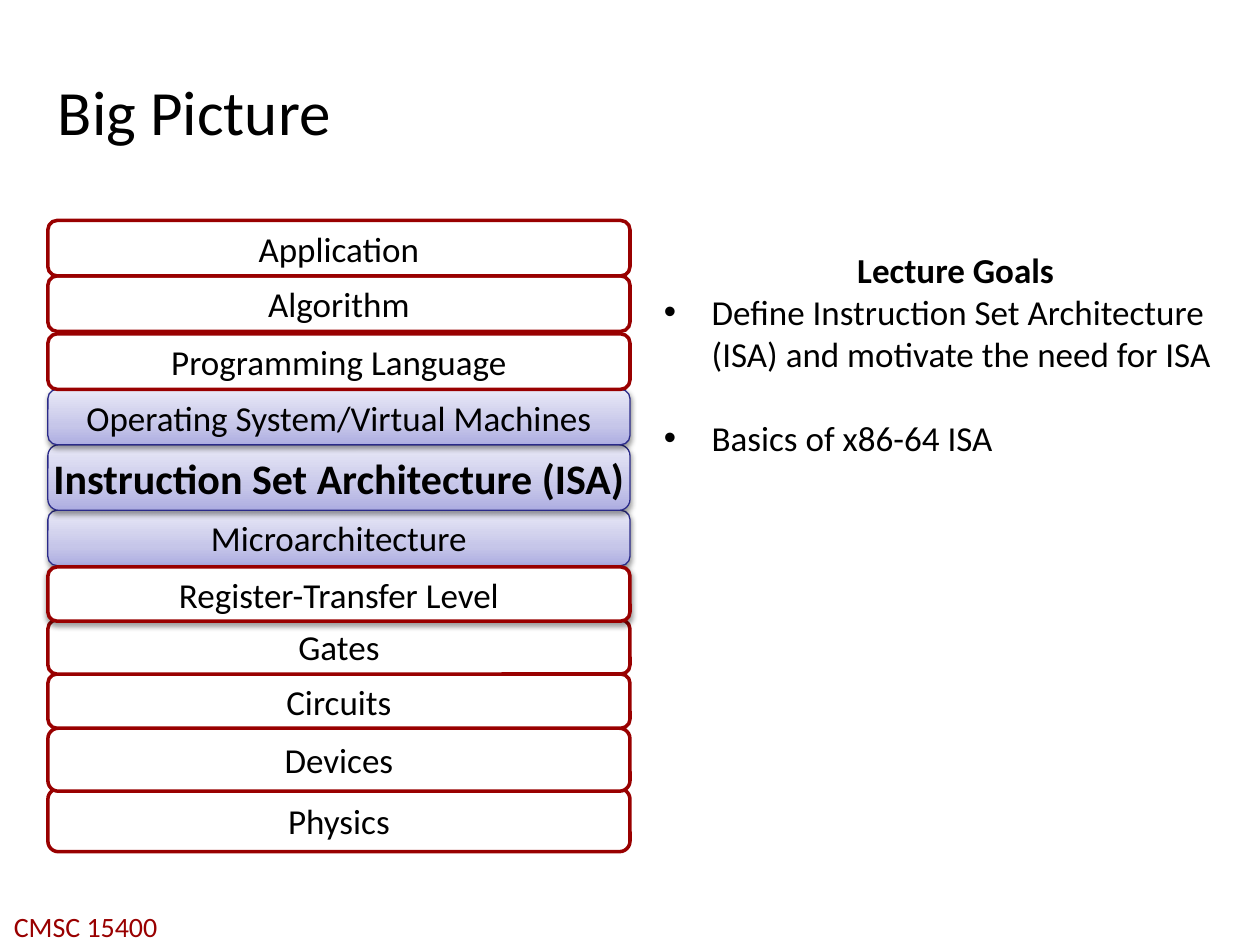
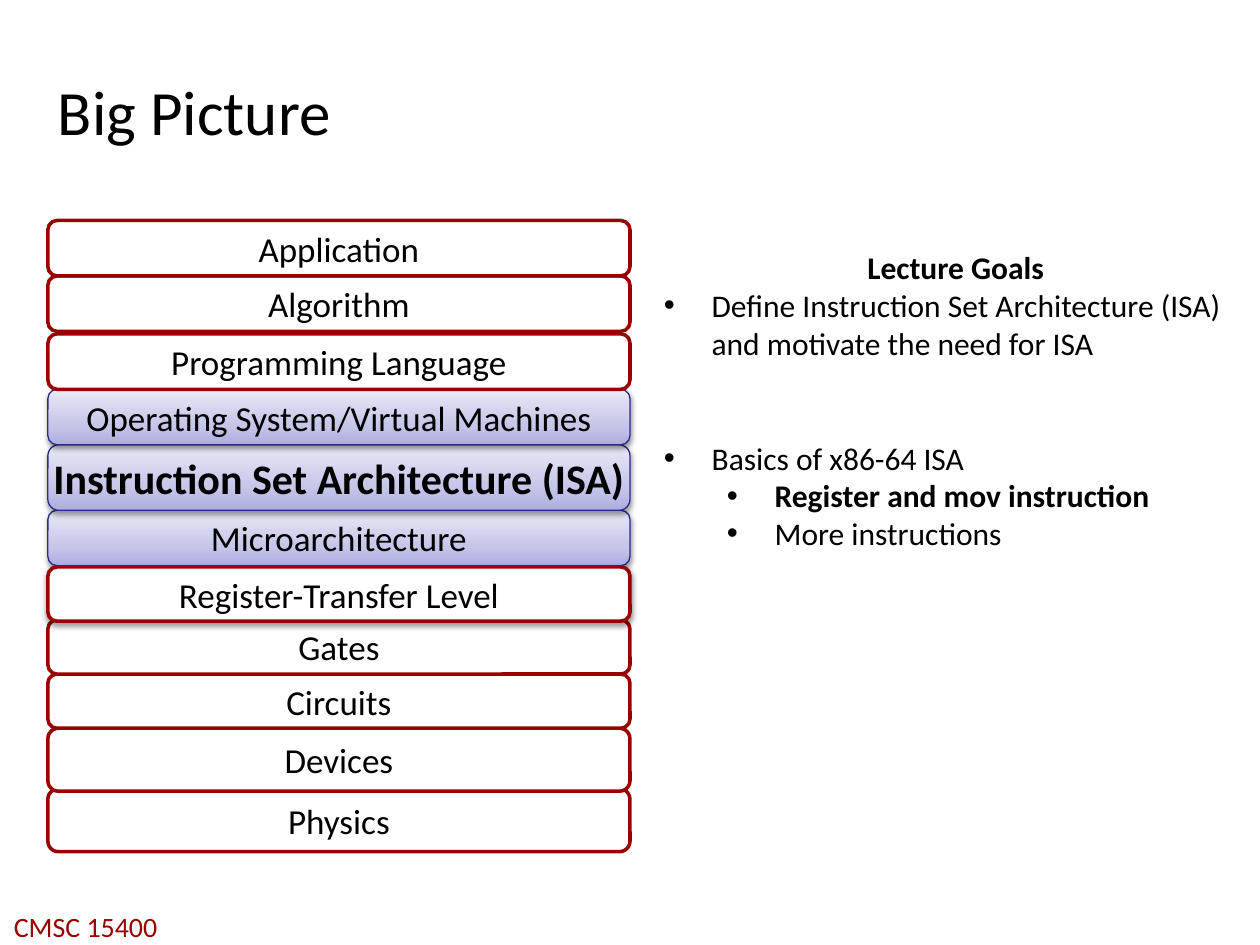
from dataclasses import dataclass

from lxml.etree import SubElement
from pptx import Presentation
from pptx.dml.color import RGBColor
from pptx.enum.shapes import MSO_SHAPE
from pptx.enum.text import MSO_ANCHOR, MSO_AUTO_SIZE, PP_ALIGN
from pptx.oxml import parse_xml
from pptx.oxml.ns import nsdecls, qn
from pptx.util import Emu, Inches, Pt

TITLE = "Big Picture"
COURSE = "CMSC 15400"

# Layer, height, gap to the layer above, look
LAYERS = [
    ("Application", 0.44, 0, "plain"),
    ("Algorithm", 0.44, 0, "plain"),
    ("Programming Language", 0.44, 0.02, "plain"),
    ("Operating System/Virtual Machines", 0.44, 0, "focus"),
    ("Instruction Set Architecture (ISA)", 0.52, 0, "key"),
    ("Microarchitecture", 0.44, 0, "focus"),
    ("Register-Transfer Level", 0.43, 0.01, "raised"),
    ("Gates", 0.43, -0.01, "plain"),
    ("Circuits", 0.43, 0, "plain"),
    ("Devices", 0.5, 0, "plain"),
    ("Physics", 0.5, -0.02, "plain"),
]

GOALS_HEADING = "Lecture Goals"
DEFINE_ISA = "Define Instruction Set Architecture (ISA) and motivate the need for ISA"
BASICS = "Basics of x86-64 ISA"

# Each goal: wording, level, lines of space above, bold
LECTURES = [
    {"size": 20, "height": 1.78,
     "goals": [(DEFINE_ISA, 0, 0, False), (BASICS, 0, 1, False)]},
    {"size": 18, "height": 2.52,
     "goals": [(DEFINE_ISA, 0, 0, False), (BASICS, 0, 2, False),
               ("Register and mov instruction", 1, 0, True),
               ("More instructions", 1, 0, False)]},
]


@dataclass(frozen=True)
class Theme:
    font: str = "Calibri"
    ink: str = "000000"
    maroon: str = "990000"
    navy: str = "2A2A89"
    paper: str = "FFFFFF"
    lilac: tuple = ((0, "ADADE1"), (35, "C6C6E9"), (100, "E9E9F7"))
    title: int = 36
    key: int = 24
    layer: int = 20
    footer: int = 16
    line_height: float = 1.22


THEME = Theme()
STACK_LEFT, STACK_TOP, STACK_WIDTH = 0.38, 1.75, 4.62
GOALS_LEFT, GOALS_TOP, GOALS_WIDTH = 5.17, 1.92, 4.83
INDENT, LEVEL_STEP = 0.38, 0.5


def apply(target, values):
    for attribute, value in values.items():
        setattr(target, attribute, value)


def write(paragraph, wording, size, color=THEME.ink, bold=False):
    run = paragraph.add_run()
    run.text = wording
    apply(run.font, {"name": THEME.font, "size": Pt(size), "bold": bold})
    run.font.color.rgb = RGBColor.from_string(color)


def add_frame(slide, left, top, width, height, **values):
    frame = slide.shapes.add_textbox(*map(Inches, (left, top, width, height))).text_frame
    apply(frame, values)
    return frame


def add_title(slide):
    margins = {f"margin_{side}": Inches(0.04) for side in ("left", "top", "right", "bottom")}
    frame = add_frame(slide, 0.42, 0.28, 9.17, 1.19, word_wrap=True,
                      vertical_anchor=MSO_ANCHOR.MIDDLE, **margins)
    write(frame.paragraphs[0], TITLE, THEME.title)


def add_footer(slide):
    frame = add_frame(slide, -0.03, 7.17, 1.42, 0.37, word_wrap=False,
                      auto_size=MSO_AUTO_SIZE.SHAPE_TO_FIT_TEXT)
    frame.paragraphs[0].alignment = PP_ALIGN.CENTER
    write(frame.paragraphs[0], COURSE, THEME.footer, THEME.maroon)


def fill_lilac(box):
    box.fill.gradient()
    stops = "".join(f'<a:gs pos="{share * 1000}"><a:srgbClr val="{color}"/></a:gs>'
                    for share, color in THEME.lilac)
    properties = box._element.spPr
    properties.replace(properties.find(qn("a:gradFill")), parse_xml(
        f'<a:gradFill {nsdecls("a")} rotWithShape="1"><a:gsLst>{stops}</a:gsLst>'
        '<a:lin ang="16200000" scaled="0"/></a:gradFill>'))


def cast_shadow(box):
    box._element.spPr.find(qn("a:effectLst")).append(parse_xml(
        f'<a:outerShdw {nsdecls("a")} blurRad="{Pt(3.1)}" dist="{Pt(1.6)}" dir="5400000" '
        'rotWithShape="0"><a:srgbClr val="000000"><a:alpha val="38000"/></a:srgbClr>'
        '</a:outerShdw>'))


def add_layer(slide, name, top, height, look):
    box = slide.shapes.add_shape(MSO_SHAPE.ROUNDED_RECTANGLE,
                                 *map(Inches, (STACK_LEFT, top, STACK_WIDTH, height)))
    box.adjustments[0] = 0.167
    box.shadow.inherit = False
    lilac = look in ("focus", "key")
    if lilac:
        fill_lilac(box)
    else:
        box.fill.solid()
        box.fill.fore_color.rgb = RGBColor.from_string(THEME.paper)
    box.line.color.rgb = RGBColor.from_string(THEME.navy if lilac else THEME.maroon)
    box.line.width = Pt(0.75 if lilac else 2)
    if look != "plain":
        cast_shadow(box)
    apply(box.text_frame, {"word_wrap": False, "vertical_anchor": MSO_ANCHOR.MIDDLE})
    label = box.text_frame.paragraphs[0]
    label.alignment = PP_ALIGN.CENTER
    key = look == "key"
    write(label, name, THEME.key if key else THEME.layer, bold=key)


def add_stack(slide):
    """Draw the layers from the bottom up, with the raised one in front."""
    placed, top = [], STACK_TOP
    for name, height, gap, look in LAYERS:
        top += gap
        placed.append((name, top, height, look))
        top += height
    for layer in sorted(reversed(placed), key=lambda layer: layer[-1] == "raised"):
        add_layer(slide, *layer)


def add_bullet(paragraph, level):
    paragraph.level = level
    properties = paragraph._p.get_or_add_pPr()
    properties.set("marL", str(Inches(INDENT + level * LEVEL_STEP)))
    properties.set("indent", str(Emu(-Inches(INDENT))))
    SubElement(properties, qn("a:buFont"), typeface="Arial")
    SubElement(properties, qn("a:buChar"), char="•")


def add_goals(slide, size, height, goals):
    frame = add_frame(slide, GOALS_LEFT, GOALS_TOP, GOALS_WIDTH, height, word_wrap=True,
                      auto_size=MSO_AUTO_SIZE.SHAPE_TO_FIT_TEXT)
    heading = frame.paragraphs[0]
    heading.alignment = PP_ALIGN.CENTER
    write(heading, GOALS_HEADING, size, bold=True)
    for wording, level, lines_above, bold in goals:
        goal = frame.add_paragraph()
        add_bullet(goal, level)
        if lines_above:
            goal.space_before = Pt(round(lines_above * size * THEME.line_height))
        write(goal, wording, size, bold=bold)


def main():
    deck = Presentation()
    apply(deck, {"slide_width": Inches(10), "slide_height": Inches(7.5)})
    for lecture in LECTURES:
        slide = deck.slides.add_slide(deck.slide_layouts[6])
        add_footer(slide)
        add_title(slide)
        add_stack(slide)
        add_goals(slide, **lecture)
    deck.save("out.pptx")


if __name__ == "__main__":
    main()
